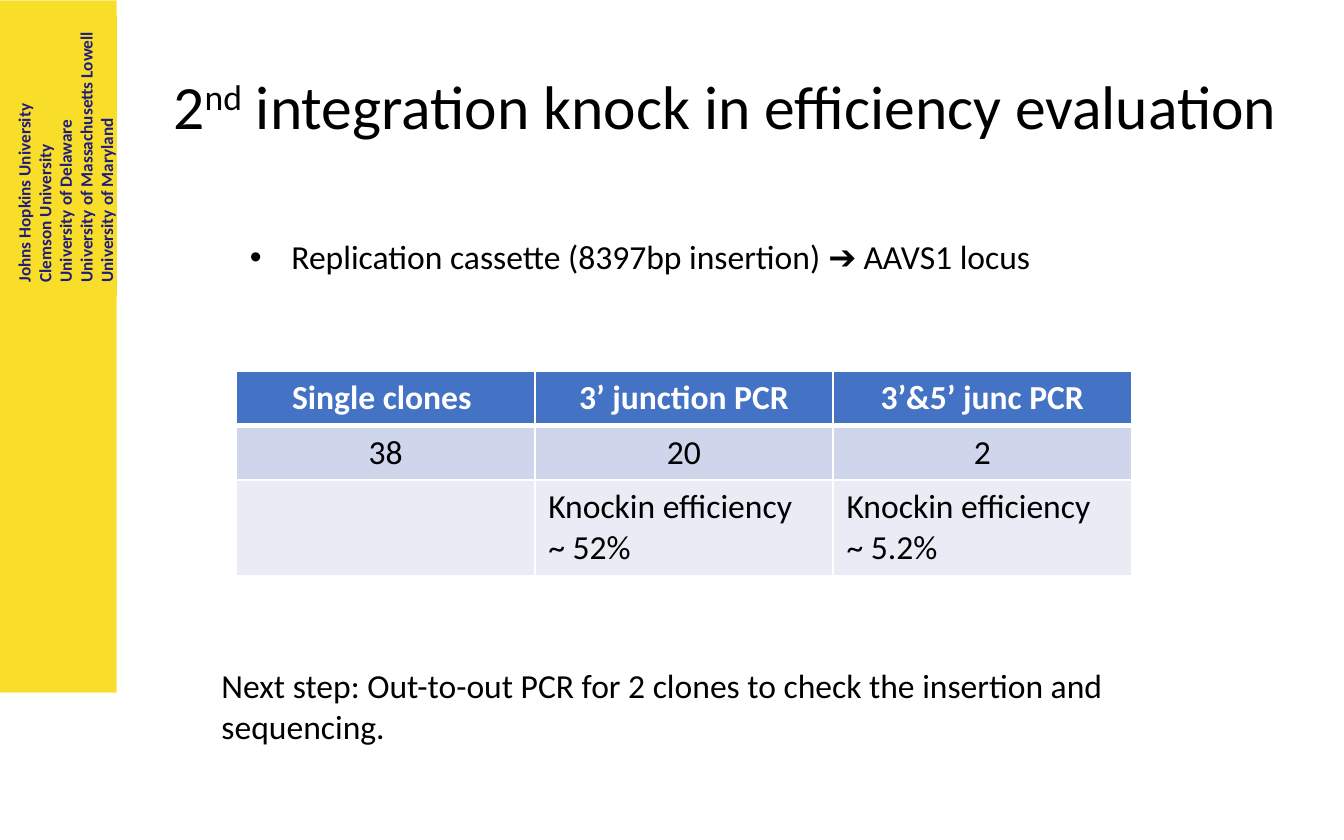
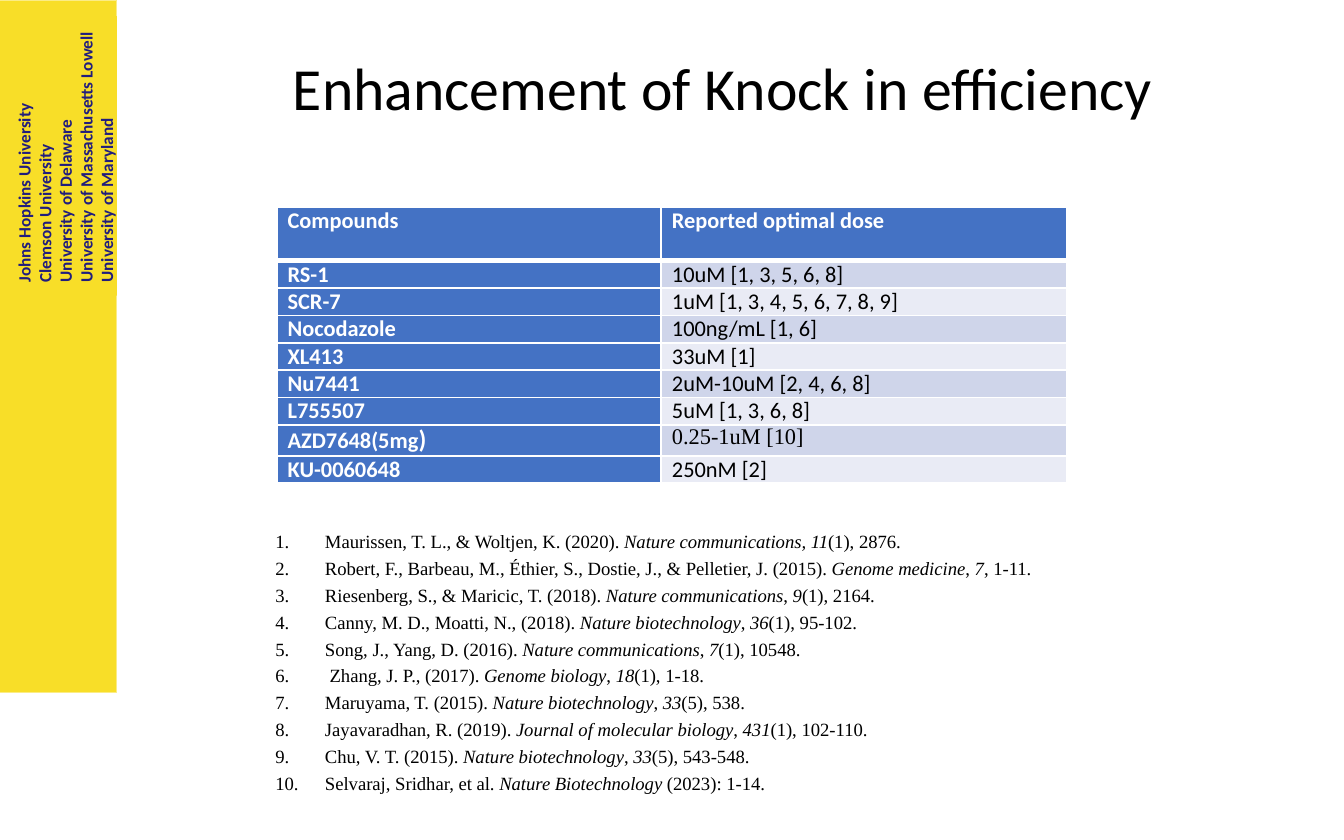
from pptx import Presentation
from pptx.dml.color import RGBColor
from pptx.enum.shapes import MSO_SHAPE
from pptx.enum.text import MSO_ANCHOR, MSO_AUTO_SIZE, PP_ALIGN
from pptx.oxml.ns import qn
from pptx.util import Inches, Pt
from lxml.etree import SubElement, Element

COLORS = {
    "band": "F8DE28", "band_edge": "FBEC85", "navy": "211D7D",
    "black": "000000", "white": "FFFFFF",
    "header": "4472C4", "row_dark": "CFD5EA", "row_light": "E9EBF5",
}
SANS, SERIF, BULLET_FONT = "Calibri", "Times New Roman", "Arial"
TITLE_ONLY = 5
UNIVERSITIES = [
    "Johns Hopkins University", "Clemson University", "University of Delaware",
    "University of Massachusetts Lowell", "University of Maryland",
]
CLONES = [
    ["Single clones ", "3’ junction PCR", "3’&5’ junc PCR"],
    ["38", "20", "2"],
    ["", "Knockin efficiency\n~ 52%", "Knockin efficiency\n~ 5.2%"],
]
DOSES = [
    ["Compounds", "Reported optimal dose"],
    ["RS-1", "10uM [1, 3, 5, 6, 8]"],
    ["SCR-7", "1uM [1, 3, 4, 5, 6, 7, 8, 9]"],
    ["Nocodazole", "100ng/mL [1, 6]"],
    ["XL413", "33uM [1]"],
    ["Nu7441", "2uM-10uM [2, 4, 6, 8]"],
    ["L755507", "5uM [1, 3, 6, 8]"],
    [[("AZD7648(5mg", {}), (")", {"size": 13.5})],
     [("0.25-1uM [10]", {"name": SERIF})]],
    ["KU-0060648", "250nM [2]"],
]
# Asterisks enclose italic words
REFERENCES = [
    "Maurissen, T. L., & Woltjen, K. (2020). *Nature communications, 11*(1), 2876.",
    "Robert, F., Barbeau, M., Éthier, S., Dostie, J., & Pelletier, J. (2015). "
    "*Genome medicine*, *7*, 1-11.",
    "Riesenberg, S., & Maricic, T. (2018). *Nature communications*, *9*(1), 2164.",
    "Canny, M. D., Moatti, N., (2018). *Nature biotechnology*, *36*(1), 95-102.",
    "Song, J., Yang, D. (2016). *Nature communications*, *7*(1), 10548.",
    " Zhang, J. P., (2017). *Genome biology*, *18*(1), 1-18.",
    "Maruyama, T. (2015). *Nature biotechnology*, *33*(5), 538.",
    "Jayavaradhan, R. (2019). *Journal of molecular biology*, *431*(1), 102-110.",
    "Chu, V. T. (2015). *Nature biotechnology*, *33*(5), 543-548.",
    "Selvaraj, Sridhar, et al. *Nature Biotechnology* (2023): 1-14.",
]


def rgb(name):
    return RGBColor.from_string(COLORS[name])


def italic_spans(line):
    return [(part, {"italic": index % 2 == 1})
            for index, part in enumerate(line.split("*")) if part]


def add_bullet(para, indent, font, tag, **attributes):
    properties = para._p.get_or_add_pPr()
    properties.set("marL", str(Inches(indent)))
    properties.set("indent", str(-Inches(indent)))
    SubElement(properties, qn("a:buFont"), typeface=font)
    SubElement(properties, qn(tag), attributes)


def write_text(frame, lines, size=18, name=SANS, color="black", bold=False,
               align=PP_ALIGN.LEFT, spacing=None, bullet=None):
    """Each line is a string or a list of (text, format changes) spans."""
    for index, line in enumerate(lines):
        para = frame.paragraphs[0] if index == 0 else frame.add_paragraph()
        para.alignment = align
        if spacing:
            para.line_spacing = spacing
        if bullet:
            add_bullet(para, **bullet)
        spans = [(line, {})] if isinstance(line, str) else line
        for text, changes in spans:
            if not text:
                continue
            span = para.add_run()
            span.text = text
            font = span.font
            font.name = changes.get("name", name)
            font.size = Pt(changes.get("size", size))
            font.bold = bold
            font.italic = changes.get("italic", False)
            font.color.rgb = rgb(color)
            if "baseline" in changes:
                span._r.get_or_add_rPr().set("baseline", changes["baseline"])


def add_text(page, box, lines, **style):
    frame = page.shapes.add_textbox(*map(Inches, box)).text_frame
    frame.word_wrap = True
    write_text(frame, lines, **style)


def add_rectangle(page, box):
    shape = page.shapes.add_shape(MSO_SHAPE.RECTANGLE, *map(Inches, box))
    shape.shadow.inherit = False
    shape.fill.solid()
    shape.fill.fore_color.rgb = rgb("band")
    return shape


def add_side_band(page, box):
    band = add_rectangle(page, box)
    band.line.color.rgb = rgb("band_edge")
    band.line.width = Pt(0.5)

    # Partner names, turned to read upwards across the band's width
    left, top, width, _ = box
    length = 2.08
    label = add_rectangle(page, (left + (width - length) / 2,
                                 top + 1.16 - width / 2, length, width))
    label.line.fill.background()
    label.rotation = 270
    frame = label.text_frame
    frame.word_wrap = True
    frame.margin_top = Inches(0.1)
    frame.margin_right = frame.margin_bottom = 0
    frame.vertical_anchor = MSO_ANCHOR.TOP
    write_text(frame, UNIVERSITIES, size=9.2, color="navy", bold=True)


def set_title(page, box, line, **style):
    title = page.shapes.title
    title.left, title.top, title.width, title.height = map(Inches, box)
    frame = title.text_frame
    frame.word_wrap = True
    frame.auto_size = MSO_AUTO_SIZE.NONE
    frame.vertical_anchor = MSO_ANCHOR.MIDDLE
    write_text(frame, [line], spacing=0.9, **style)


def set_borders(cell, top, bottom):
    properties = cell._tc.get_or_add_tcPr()
    widths = {"a:lnL": 1, "a:lnR": 1, "a:lnT": top, "a:lnB": bottom}
    for position, (tag, width) in enumerate(widths.items()):
        edge = Element(qn(tag), w=str(Pt(width)))
        fill = SubElement(edge, qn("a:solidFill"))
        SubElement(fill, qn("a:srgbClr"), val=COLORS["white"])
        properties.insert(position, edge)


def add_grid(page, box, rows, widths, heights, size, centered_rows=0,
             header_column=False, tight=False):
    table = page.shapes.add_table(len(rows), len(widths), *map(Inches, box)).table
    for column, width in zip(table.columns, widths):
        column.width = Inches(width)
    for r, (row, height) in enumerate(zip(rows, heights)):
        table.rows[r].height = Inches(height)
        for c, content in enumerate(row):
            cell = table.cell(r, c)
            heading = r == 0 or (header_column and c == 0)
            cell.fill.solid()
            cell.fill.fore_color.rgb = rgb(
                "header" if heading else "row_dark" if r % 2 else "row_light")
            set_borders(cell, top=3 if r == 1 else 1, bottom=3 if r == 0 else 1)
            if tight:
                cell.margin_left = cell.margin_right = Inches(0.08)
                cell.margin_top = cell.margin_bottom = 0
            lines = content.split("\n") if isinstance(content, str) else [content]
            write_text(cell.text_frame, lines, size=size, bold=heading,
                       color="white" if heading else "black",
                       align=PP_ALIGN.CENTER if r < centered_rows else PP_ALIGN.LEFT)


def add_page(deck):
    page = deck.slides.add_slide(deck.slide_layouts[TITLE_ONLY])
    add_side_band(page, (0, 0, 0.87, 5.15))
    return page


def build_evaluation(deck):
    page = add_page(deck)
    set_title(page, (1.19, 0.21, 8.62, 1.21),
              [("2", {}), ("nd", {"baseline": "30000"}),
               (" integration knock in efficiency evaluation", {})], size=33)
    # Clone counts
    add_grid(page, (1.76, 2.76, 6.66, 1.5), CLONES, [2.22] * 3,
             [0.39, 0.4, 0.71], size=18, centered_rows=2)
    # Cassette and next step
    add_text(page, (1.76, 1.71, 6.78, 0.4),
             ["Replication cassette (8397bp insertion) ➔ AAVS1 locus"],
             bullet={"indent": 0.31, "font": BULLET_FONT,
                     "tag": "a:buChar", "char": "•"})
    add_text(page, (1.55, 4.9, 7.44, 0.71),
             ["Next step: Out-to-out PCR for 2 clones to check the insertion "
              "and sequencing."])


def build_enhancement(deck):
    page = add_page(deck)
    set_title(page, (2.06, 0.11, 6.64, 1.13), "Enhancement of Knock in efficiency ",
              size=32, align=PP_ALIGN.CENTER)
    # Compound doses
    add_grid(page, (2.06, 1.54, 5.88, 2.03), DOSES, [2.86, 3.02],
             [0.4] + [0.2] * 6 + [0.23, 0.2], size=12,
             header_column=True, tight=True)
    # Numbered references
    add_text(page, (1.95, 3.86, 6.27, 2.11),
             [italic_spans(line) for line in REFERENCES],
             size=10, name=SERIF, spacing=1.2,
             bullet={"indent": 0.37, "font": SERIF,
                     "tag": "a:buAutoNum", "type": "arabicPeriod"})


def main():
    deck = Presentation()
    deck.slide_width, deck.slide_height = Inches(10), Inches(6.25)
    build_evaluation(deck)
    build_enhancement(deck)
    deck.save("out.pptx")


if __name__ == "__main__":
    main()
